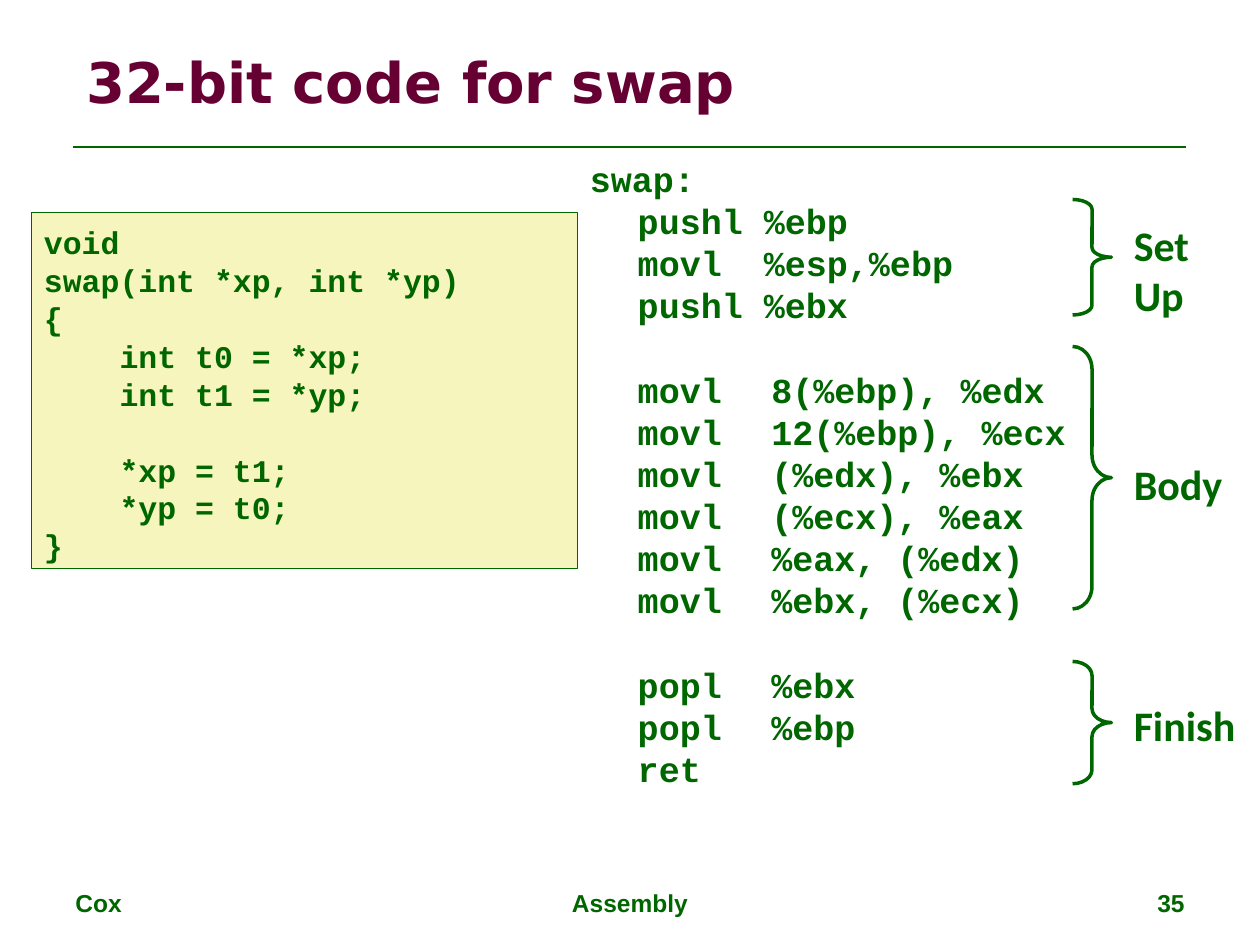
from dataclasses import dataclass

from lxml.etree import SubElement
from pptx import Presentation
from pptx.dml.color import RGBColor
from pptx.enum.shapes import MSO_CONNECTOR, MSO_SHAPE
from pptx.enum.text import MSO_ANCHOR, PP_ALIGN
from pptx.oxml.ns import qn
from pptx.util import Inches, Pt


@dataclass(frozen=True)
class Theme:
    green: RGBColor = RGBColor.from_string("006600")
    plum: RGBColor = RGBColor.from_string("660033")
    cream: RGBColor = RGBColor.from_string("F6F5BD")
    title_font: str = "DejaVu Sans"
    code_font: str = "Courier New"
    label_font: str = "Calibri"
    footer_font: str = "Arial"
    title_size: float = 32
    label_size: float = 24
    assembly_size: float = 20
    source_size: float = 18
    footer_size: float = 14
    code_leading: float = 1.205  # line pitch as a share of the type size


class SlideBuilder:
    """Places elements on a grid of 120 columns by 90 rows (12 to the inch)."""

    def __init__(self, presentation, theme):
        self.theme = theme
        self.slide = presentation.slides.add_slide(presentation.slide_layouts[5])

    @staticmethod
    def grid(*cells):
        return [Inches(cell / 12) for cell in cells]

    def add_run(self, paragraph, text, font, size, color=None):
        run = paragraph.add_run()
        run.text = text
        run.font.name = font
        run.font.size = Pt(size)
        run.font.bold = True
        run.font.color.rgb = color or self.theme.green

    def outline(self, shape, width):
        shape.shadow.inherit = False
        shape.line.color.rgb = self.theme.green
        shape.line.width = Pt(width)

    def title(self, text, *box):
        shape = self.slide.shapes.title
        shape.left, shape.top, shape.width, shape.height = self.grid(*box)
        shape.text_frame.vertical_anchor = MSO_ANCHOR.MIDDLE
        paragraph = shape.text_frame.paragraphs[0]
        paragraph.alignment = PP_ALIGN.LEFT
        self.add_run(paragraph, text, self.theme.title_font,
                     self.theme.title_size, self.theme.plum)

    def rule(self, left, right, row):
        line = self.slide.shapes.add_connector(
            MSO_CONNECTOR.STRAIGHT, *self.grid(left, row, right, row))
        line.line.color.rgb = self.theme.green
        line.line.width = Pt(1.5)
        SubElement(line._element.spPr, qn("a:effectLst"))

    def text(self, lines, box, font, size, align=PP_ALIGN.LEFT, wrap=True):
        shape = self.slide.shapes.add_textbox(*self.grid(*box))
        shape.text_frame.word_wrap = wrap
        for index, line in enumerate(lines):
            frame = shape.text_frame
            paragraph = frame.add_paragraph() if index else frame.paragraphs[0]
            paragraph.alignment = align
            self.add_run(paragraph, line, font, size)

    def code(self, blocks, box, size, filled=False, tabs=()):
        """Sets blocks of code lines, with one line of space between blocks."""
        shape = self.slide.shapes.add_shape(MSO_SHAPE.RECTANGLE, *self.grid(*box))
        if filled:
            shape.fill.solid()
            shape.fill.fore_color.rgb = self.theme.cream
            self.outline(shape, 1)
        else:
            shape.shadow.inherit = False
            shape.fill.background()
            shape.line.fill.background()
        frame = shape.text_frame
        frame.word_wrap = True
        frame.vertical_anchor = MSO_ANCHOR.TOP
        frame.margin_top = Inches(0.08)
        pitch = Pt(size * self.theme.code_leading)
        paragraph = None
        for block_index, block in enumerate(blocks):
            for line_index, line in enumerate(block):
                paragraph = frame.add_paragraph() if paragraph else frame.paragraphs[0]
                paragraph.alignment = PP_ALIGN.LEFT
                paragraph.line_spacing = pitch
                if block_index and not line_index:
                    paragraph.space_before = pitch
                self.tab_stops(paragraph, tabs)
                self.add_run(paragraph, line, self.theme.code_font, size)

    @staticmethod
    def tab_stops(paragraph, tabs):
        if tabs:
            tab_list = SubElement(paragraph._p.get_or_add_pPr(), qn("a:tabLst"))
            for position in tabs:
                SubElement(tab_list, qn("a:tab"),
                           pos=str(Inches(position)), algn="l")

    def brace(self, top, height, curve):
        shape = self.slide.shapes.add_shape(
            MSO_SHAPE.RIGHT_BRACE, *self.grid(102.15, top, 3.7, height))
        shape.adjustments[0] = curve
        shape.adjustments[1] = 0.5
        shape.fill.background()
        self.outline(shape, 2)


SOURCE = [
    ["void", "swap(int *xp, int *yp)", "{",
     "    int t0 = *xp;", "    int t1 = *yp;"],
    ["    *xp = t1;", "    *yp = t0;", "}"],
]
ASSEMBLY = [
    ["swap:", "\tpushl %ebp", "\tmovl  %esp,%ebp", "\tpushl %ebx"],
    ["\tmovl\t8(%ebp), %edx", "\tmovl\t12(%ebp), %ecx",
     "\tmovl\t(%edx), %ebx", "\tmovl\t(%ecx), %eax",
     "\tmovl\t%eax, (%edx)", "\tmovl\t%ebx, (%ecx)"],
    ["\tpopl\t%ebx", "\tpopl\t%ebp", "\tret"],
]
# Brace top, height and curve; label lines, top, width and height
SECTIONS = [
    (19, 11, 0.25, ["Set", "Up"], 20.3, 7.8, 10.9),
    (33, 25, 0.585, ["Body"], 43.1, 10.9, 6.1),
    (63, 11.65, 0.362, ["Finish"], 66, 12.2, 6.1),
]
FOOTERS = [
    ("Cox", 6, 28, PP_ALIGN.LEFT),
    ("Assembly", 41, 38, PP_ALIGN.CENTER),
    ("35", 86, 28, PP_ALIGN.RIGHT),
]


def main():
    presentation = Presentation()
    presentation.slide_width, presentation.slide_height = Inches(10), Inches(7.5)
    theme = Theme()
    builder = SlideBuilder(presentation, theme)

    # Heading
    builder.rule(7, 113, 14)
    builder.title("32-bit code for swap", 7, 4, 100.5, 7.5)

    # C source and its assembly
    builder.code(SOURCE, (3, 20.25, 52, 33.9), theme.source_size, filled=True)
    builder.code(ASSEMBLY, (55, 14, 55, 61.8), theme.assembly_size,
                 tabs=(0.38, 1.44))

    # Sections of the assembly
    for top, height, curve, label, label_top, width, label_height in SECTIONS:
        builder.brace(top, height, curve)
        builder.text(label, (106.8, label_top, width, label_height),
                     theme.label_font, theme.label_size, wrap=False)

    # Footer
    for text, left, width, align in FOOTERS:
        builder.text([text], (left, 84, width, 4.2),
                     theme.footer_font, theme.footer_size, align)

    presentation.save("out.pptx")


if __name__ == "__main__":
    main()
